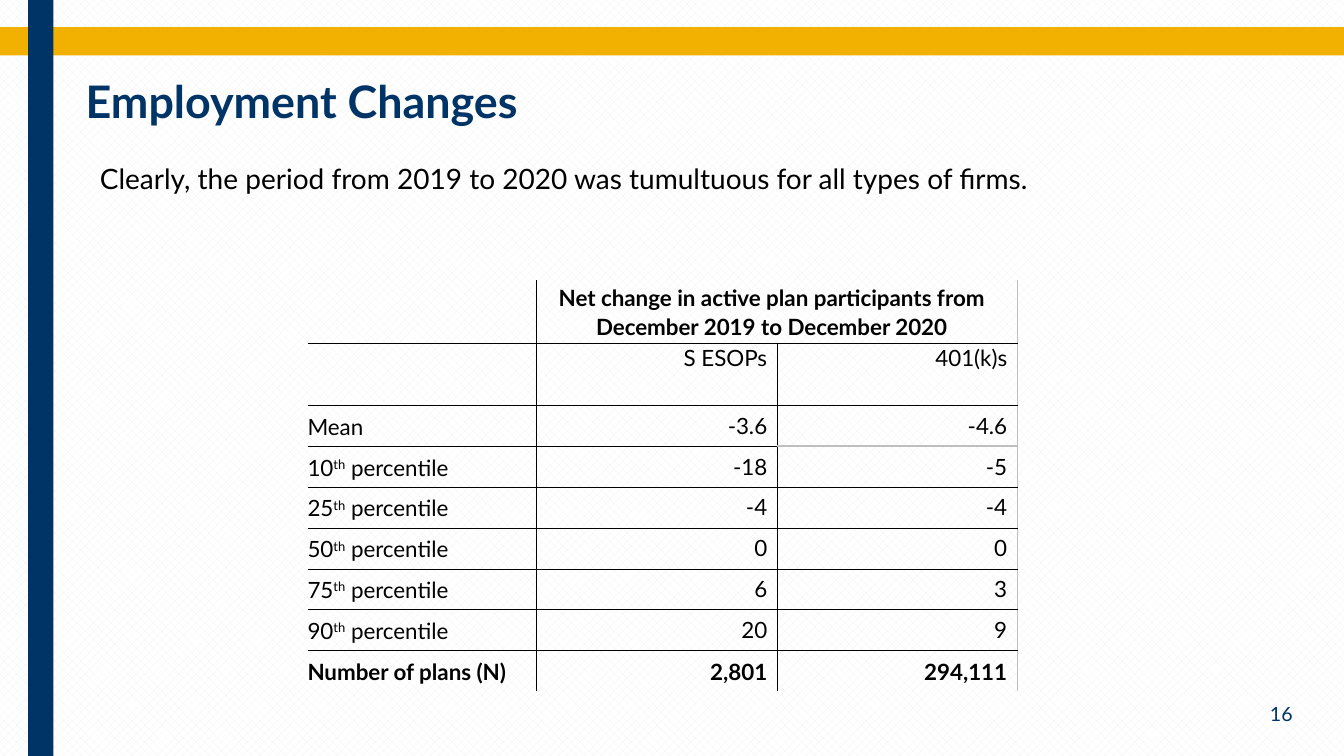
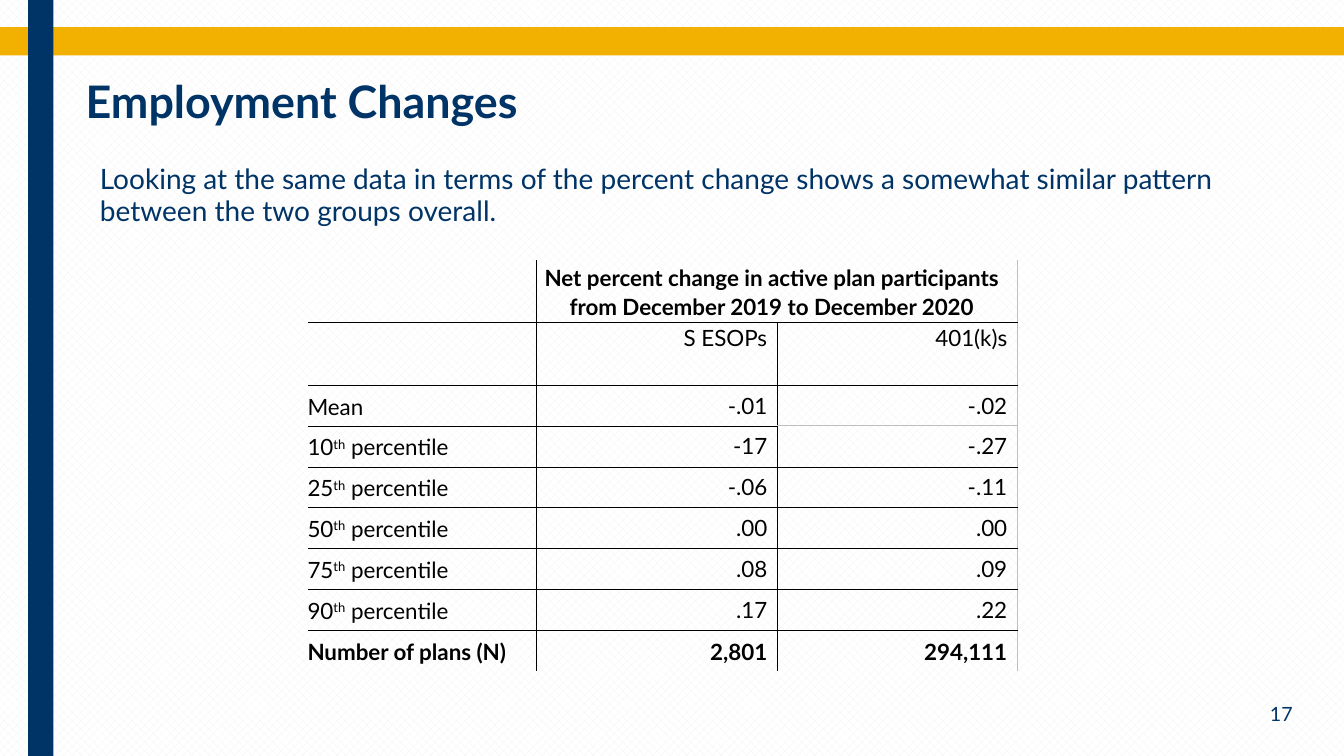
"""Build two slides comparing plan participant changes at S ESOPs and 401(k)s."""
from lxml import etree
from pptx import Presentation
from pptx.dml.color import RGBColor
from pptx.enum.dml import MSO_PATTERN_TYPE
from pptx.enum.shapes import MSO_SHAPE
from pptx.enum.text import MSO_ANCHOR, MSO_AUTO_SIZE, PP_ALIGN
from pptx.oxml.ns import qn
from pptx.util import Inches, Pt

RECTANGLE = MSO_SHAPE.RECTANGLE
DOTS = MSO_PATTERN_TYPE.from_xml("pct40")
TOP, MIDDLE = MSO_ANCHOR.TOP, MSO_ANCHOR.MIDDLE
LEFT, CENTER, RIGHT = PP_ALIGN.LEFT, PP_ALIGN.CENTER, PP_ALIGN.RIGHT
NO_FIT = MSO_AUTO_SIZE.NONE

COLORS = {
    "navy": "003366",
    "gold": "F2B100",
    "black": "000000",
    "grey": "BFBFBF",
    "dots": "F2F2F2",
    "white": "FFFFFF",
}
FONT = "Lato"
PLAIN_TABLE = "{2D5ABB26-0587-4C30-8999-92F81FD0307C}"
SLIDE_WIDTH, SLIDE_HEIGHT = Inches(13.33), Inches(7.5)
TITLE_BOX = [Inches(n) for n in (0.75, 0.75, 10.5, 0.71)]
BODY_BOX = [Inches(n) for n in (0.75, 1.58, 12.37, 5.29)]
NUMBER_BOX = [Inches(n) for n in (11.17, 6.86, 1.75, 0.44)]
COLUMN_WIDTHS = [Inches(n) for n in (2.27, 2.39, 2.38)]
HEADER_HEIGHT = Inches(0.62)
DATA_HEIGHT = Inches(2.84) // 7
GROUPS = ["S ESOPs", "401(k)s"]
PERCENTILES = ["10", "25", "50", "75", "90"]
PLAN_COUNTS = ("2,801", "294,111")
MEAN_ROW, LAST_ROW, LAST_COLUMN = 2, 8, 2

PAGES = [
    {
        "number": "16",
        "message": "Clearly, the period from 2019 to 2020 was tumultuous for all types of firms.",
        "message_color": "black",
        "table_top": 2.78,
        "heading": "Net change in active plan participants from December 2019 to December 2020",
        "values": [("-3.6", "-4.6"), ("-18", "-5"), ("-4", "-4"),
                   ("0", "0"), ("6", "3"), ("20", "9")],
    },
    {
        "number": "17",
        "message": "Looking at the same data in terms of the percent change shows a somewhat "
                   "similar pattern between the two groups overall.",
        "message_color": "navy",
        "table_top": 2.58,
        "heading": "Net percent change in active plan participants from December 2019 to December 2020",
        "values": [("-.01", "-.02"), ("-17", "-.27"), ("-.06", "-.11"),
                   (".00", ".00"), (".08", ".09"), (".17", ".22")],
    },
]


def rgb(name):
    """Return the named colour."""
    return RGBColor.from_string(COLORS[name])


def add_run(paragraph, text, size, color, bold=False, raised=False):
    """Add one formatted run, optionally as superscript."""
    run = paragraph.add_run()
    run.text = text
    run.font.name = FONT
    run.font.size = Pt(size)
    run.font.bold = bold
    run.font.color.rgb = rgb(color)
    if raised:
        run.font._element.set("baseline", "30000")


def add_band(slide, layout, color, *box):
    """Draw a coloured band and move it to the shared layout."""
    band = slide.shapes.add_shape(RECTANGLE, *box)
    band.shadow.inherit = False
    band.fill.solid()
    band.fill.fore_color.rgb = rgb(color)
    band.line.fill.background()
    layout.shapes._spTree.append(band._element)


def style_layout(layout):
    """Set the background and placeholder places that all slides share."""
    backdrop = layout.background.fill
    backdrop.patterned()
    backdrop.pattern = DOTS
    backdrop.fore_color.rgb = rgb("dots")
    backdrop.back_color.rgb = rgb("white")
    boxes = {0: TITLE_BOX, 1: BODY_BOX}
    for holder in list(layout.placeholders):
        box = boxes.get(holder.placeholder_format.idx)
        if box:
            holder.left, holder.top, holder.width, holder.height = box
        else:
            holder._element.getparent().remove(holder._element)


def fill_title(slide, text):
    """Write the slide title."""
    frame = slide.shapes.title.text_frame
    frame.auto_size = NO_FIT
    frame.vertical_anchor = TOP
    heading = frame.paragraphs[0]
    heading.alignment = LEFT
    heading.line_spacing = 0.89
    add_run(heading, text, 32, "navy", bold=True)


def fill_message(slide, text, color):
    """Write the unbulleted message in the body placeholder."""
    frame = slide.placeholders[1].text_frame
    frame.auto_size = NO_FIT
    frame.margin_right = Inches(0.4)
    message = frame.paragraphs[0]
    properties = message._p.get_or_add_pPr()
    properties.set("marL", str(Inches(0.14)))
    properties.set("indent", "0")
    etree.SubElement(properties, qn("a:buNone"))
    message.line_spacing = 0.94
    message.space_before = Pt(0)
    message.space_after = Pt(2)
    add_run(message, text, 20, color)


def add_page_number(slide, number):
    """Write the page number at the lower right."""
    frame = slide.shapes.add_textbox(*NUMBER_BOX).text_frame
    frame.word_wrap = True
    frame.vertical_anchor = MIDDLE
    footer = frame.paragraphs[0]
    footer.alignment = RIGHT
    add_run(footer, number, 14, "navy")


def border_colors(row, column):
    """Return the colour of each side of a cell, None where it is open."""
    in_heading = row == 0 and column > 0
    at_right = column == LAST_COLUMN
    colors = dict.fromkeys(("L", "R", "T", "B"), "black")
    if column == 0 or (in_heading and at_right):
        colors["L"] = None
    if at_right or in_heading:
        colors["R"] = "grey"
    if row == 0:
        colors["T"] = None
    if row == LAST_ROW:
        colors["B"] = None
    if at_right and row == MEAN_ROW:
        colors["B"] = "grey"
    if at_right and row == MEAN_ROW + 1:
        colors["T"] = "grey"
    return colors


def draw_borders(cell, colors):
    """Draw the cell borders and leave the cell unfilled."""
    properties = cell._tc.get_or_add_tcPr()
    for side, color in colors.items():
        width = Pt(1) if color == "grey" else Pt(0.25)
        line = etree.SubElement(properties, qn(f"a:ln{side}"), w=str(width))
        if color:
            paint = etree.SubElement(line, qn("a:solidFill"))
            etree.SubElement(paint, qn("a:srgbClr"), val=COLORS[color])
        else:
            etree.SubElement(line, qn("a:noFill"))
    cell.fill.background()


def fill_cell(cell, parts, align, anchor=MIDDLE, bold=False, spacing=1.07):
    """Write the parts of a cell, every second one raised."""
    cell.margin_left = cell.margin_top = cell.margin_bottom = 0
    cell.margin_right = Inches(0.1)
    cell.vertical_anchor = anchor
    entry = cell.text_frame.paragraphs[0]
    entry.alignment = align
    entry.line_spacing = spacing
    for index, part in enumerate(parts):
        add_run(entry, part, 16, "black", bold, raised=index % 2 == 1)


def add_change_table(slide, top, heading, values):
    """Add the table of participant changes by group."""
    labels = [["Mean"]] + [[n, "th", " percentile"] for n in PERCENTILES]
    labels.append(["Number of plans (N)"])
    heights = [HEADER_HEIGHT] * 2 + [DATA_HEIGHT] * len(labels)
    frame = slide.shapes.add_table(len(heights), len(COLUMN_WIDTHS), Inches(3.05), Inches(top),
                                   sum(COLUMN_WIDTHS), sum(heights))
    table = frame.table
    table._tbl.tblPr.find(qn("a:tableStyleId")).text = PLAIN_TABLE
    table.first_row = table.horz_banding = False
    for column, width in zip(table.columns, COLUMN_WIDTHS):
        column.width = width
    for row, height in zip(table.rows, heights):
        row.height = height
    for row in range(len(heights)):
        for column in range(len(COLUMN_WIDTHS)):
            draw_borders(table.cell(row, column), border_colors(row, column))

    table.cell(0, 1).merge(table.cell(0, 2))
    fill_cell(table.cell(0, 1), [heading], CENTER, bold=True)
    for column, group in enumerate(GROUPS, 1):
        fill_cell(table.cell(1, column), [group], RIGHT, TOP)
    for row, (label, pair) in enumerate(zip(labels, values + [PLAN_COUNTS]), MEAN_ROW):
        total = row == LAST_ROW
        fill_cell(table.cell(row, 0), label, LEFT, bold=total)
        for column, value in enumerate(pair, 1):
            fill_cell(table.cell(row, column), [value], RIGHT, bold=total,
                      spacing=1.07 if total else 1.0)


def add_page(deck, layout, page):
    """Add one slide with title, message, table and page number."""
    slide = deck.slides.add_slide(layout)
    fill_title(slide, "Employment Changes")
    fill_message(slide, page["message"], page["message_color"])
    add_change_table(slide, page["table_top"], page["heading"], page["values"])
    add_page_number(slide, page["number"])
    return slide


def main():
    """Build and save the presentation."""
    deck = Presentation()
    deck.slide_width, deck.slide_height = SLIDE_WIDTH, SLIDE_HEIGHT
    layout = deck.slide_layouts[1]
    style_layout(layout)
    slides = [add_page(deck, layout, page) for page in PAGES]
    add_band(slides[0], layout, "gold", 0, Inches(0.27), SLIDE_WIDTH, Inches(0.28))
    add_band(slides[0], layout, "navy", Inches(0.28), 0, Inches(0.25), SLIDE_HEIGHT)
    deck.save("out.pptx")


if __name__ == "__main__":
    main()
